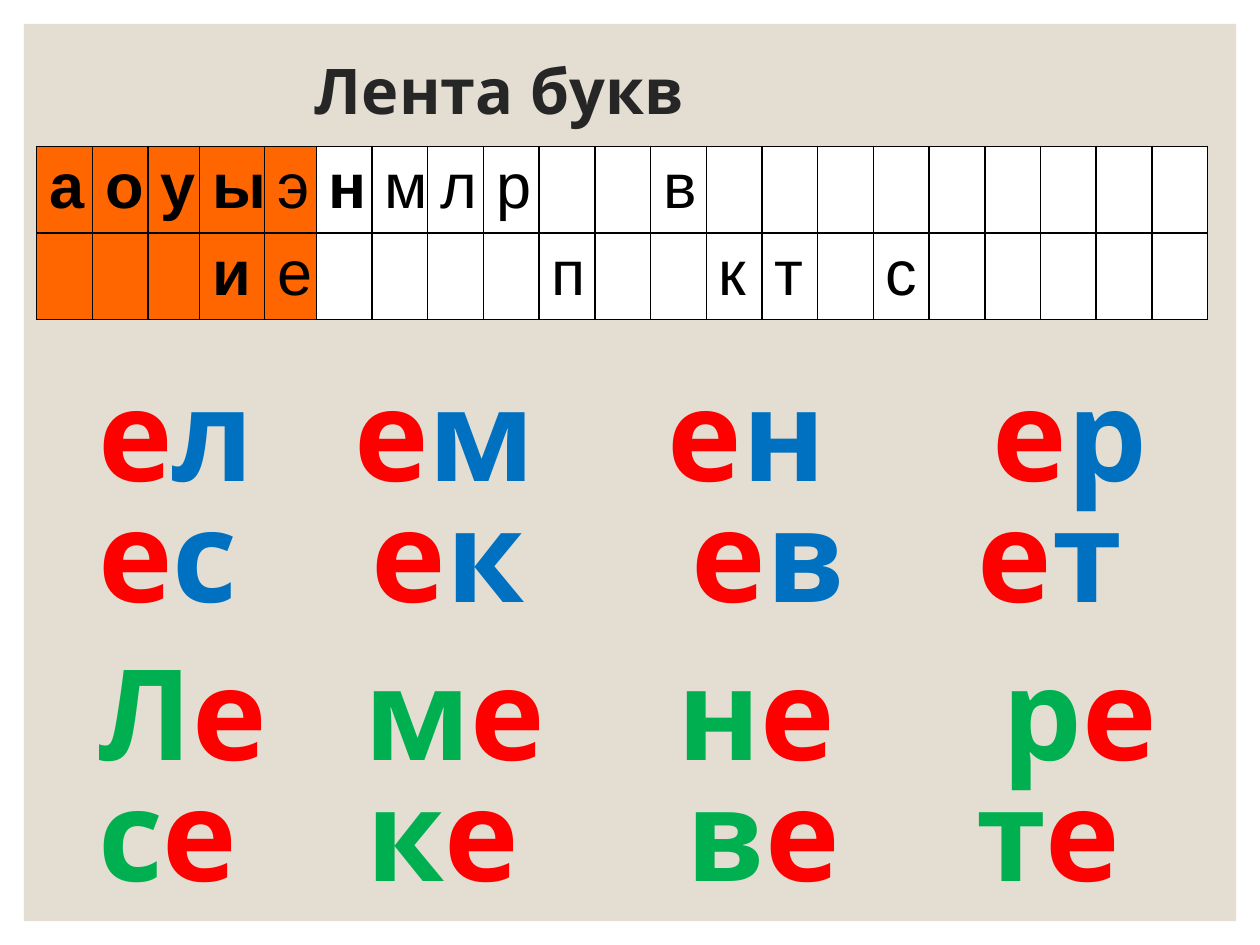
from lxml import etree
from pptx import Presentation
from pptx.dml.color import RGBColor
from pptx.enum.shapes import MSO_SHAPE
from pptx.enum.text import MSO_ANCHOR
from pptx.oxml.ns import qn
from pptx.util import Cm, Pt

RECT = MSO_SHAPE.RECTANGLE
MIDDLE = MSO_ANCHOR.MIDDLE
SAND = RGBColor(0xE3, 0xDE, 0xD1)
DARK = RGBColor(0x26, 0x26, 0x26)
BLACK = RGBColor(0, 0, 0)
WHITE = RGBColor(0xFF, 0xFF, 0xFF)
ORANGE = RGBColor(0xFF, 0x66, 0)
RED = RGBColor(0xFF, 0, 0)
BLUE = RGBColor(0, 0x70, 0xC0)
GREEN = RGBColor(0, 0xB0, 0x50)
HEAD = "League Spartan"
BODY = "Arial"

TAPE = ["аоуыэнмлр  в         ", "   ие    п  кт с     "]
BOLD = "аоуыни"
VOWELS = 5
ODD = {2: 1.04, 3: 1.31, 4: 1.04}
CLOSED = [
    (["ел", "ем", "ен", "ер"], [5.16, 11.48, 18.03]),
    (["ес", "ек", "ев", "ет"], [5.51, 11.96, 17.73]),
]
OPEN = [
    (["Ле", "ме", "не", "ре"], [5.36, 11.68, 18.24]),
    (["се", "ке", "ве", "те"], [5.41, 11.86, 17.7]),
]


def add_run(para, text, font, size, color, bold=True):
    """Add one styled run to a paragraph."""
    run = para.add_run()
    run.text = text
    run.font.name = font
    run.font.size = Pt(size)
    run.font.bold = bold
    run.font.color.rgb = color


def add_box(slide, left, top, width, height):
    """Add a wrapped, middle-anchored text box and return its frame."""
    frame = slide.shapes.add_textbox(Cm(left), Cm(top), Cm(width), Cm(height)).text_frame
    frame.word_wrap = True
    frame.vertical_anchor = MIDDLE
    return frame


def add_panel(slide, left, top, width, height):
    """Draw the sand-coloured backdrop."""
    panel = slide.shapes.add_shape(RECT, Cm(left), Cm(top), Cm(width), Cm(height))
    panel.shadow.inherit = False
    panel.fill.solid()
    panel.fill.fore_color.rgb = SAND
    panel.line.fill.background()


def add_title(slide, left, top, width, height):
    """Write the heading."""
    para = add_box(slide, left, top, width, height).paragraphs[0]
    para.line_spacing = 0.9
    add_run(para, "Лента букв", HEAD, 36, DARK)


def add_edges(cell):
    """Rule all four sides of a cell in black."""
    props = cell._tc.get_or_add_tcPr()
    for spot, side in enumerate(("lnL", "lnR", "lnT", "lnB")):
        line = etree.Element(qn(f"a:{side}"), w=str(Pt(1)))
        fill = etree.SubElement(line, qn("a:solidFill"))
        etree.SubElement(fill, qn("a:srgbClr"), val=str(BLACK))
        props.insert(spot, line)


def add_tape(slide, left, top, width, height):
    """Build the letter tape as a table, vowels on orange."""
    count = len(TAPE[0])
    table = slide.shapes.add_table(
        len(TAPE), count, Cm(left), Cm(top), Cm(width), Cm(height)).table
    table.first_row = table.horz_banding = False
    plain = (width - sum(ODD.values())) / (count - len(ODD))
    for col, column in enumerate(table.columns):
        column.width = Cm(ODD.get(col, plain))
    for row, letters in enumerate(TAPE):
        for col, letter in enumerate(letters):
            cell = table.cell(row, col)
            cell.margin_top = cell.margin_bottom = Cm(0.11)
            cell.fill.solid()
            cell.fill.fore_color.rgb = ORANGE if col < VOWELS else WHITE
            add_edges(cell)
            if letter.strip():
                add_run(cell.text_frame.paragraphs[0], letter, BODY, 36, BLACK, letter in BOLD)


def set_tabs(para, stops):
    """Give a paragraph left tab stops."""
    tabs = etree.SubElement(para._p.get_or_add_pPr(), qn("a:tabLst"))
    for stop in stops:
        etree.SubElement(tabs, qn("a:tab"), pos=str(Cm(stop)), algn="l")


def add_drill(slide, rows, tone, left, top, width, height):
    """Write rows of syllables, the vowel red and the consonant in tone."""
    frame = add_box(slide, left, top, width, height)
    frame.margin_top = Cm(0.5)
    for index, (words, stops) in enumerate(rows):
        para = frame.add_paragraph() if index else frame.paragraphs[0]
        set_tabs(para, stops)
        para.line_spacing = 0.8
        for spot, word in enumerate(words):
            for place, letter in enumerate(word):
                lead = "\t" if spot and not place else ""
                add_run(para, lead + letter, HEAD, 72, RED if letter == "е" else tone)


def main():
    """Compose the slide and save it."""
    deck = Presentation()
    deck.slide_width, deck.slide_height = Cm(25.4), Cm(19.05)
    slide = deck.slides.add_slide(deck.slide_layouts[6])
    add_panel(slide, 0.48, 0.48, 24.44, 18.09)
    add_title(slide, 6.1, 1.32, 8.79, 1.14)
    add_tape(slide, 0.74, 2.95, 23.62, 3.38)
    add_drill(slide, CLOSED, BLUE, 1.73, 6.71, 23.06, 6.6)
    add_drill(slide, OPEN, GREEN, 1.73, 12.34, 23.06, 6.6)
    deck.save("out.pptx")


if __name__ == "__main__":
    main()
